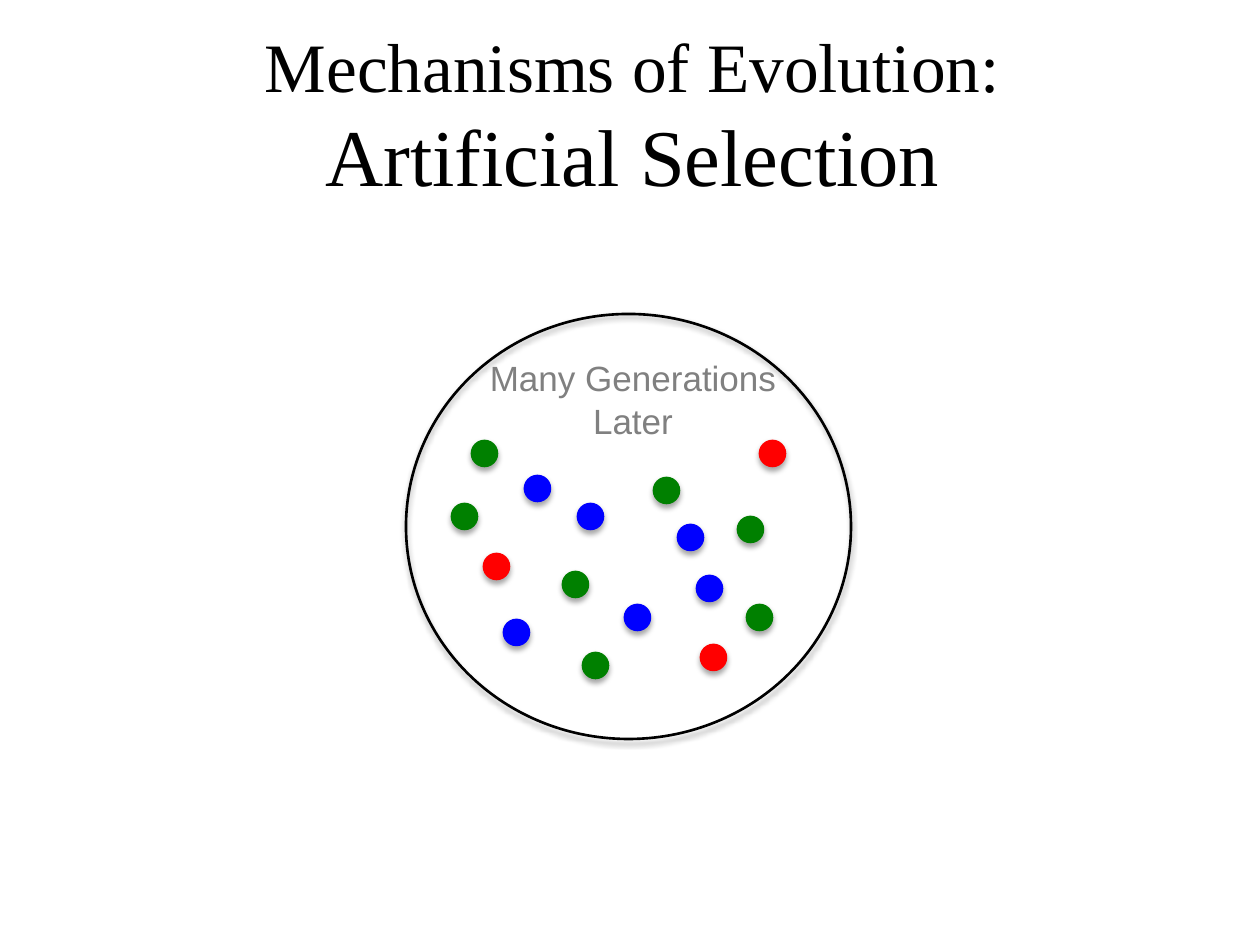
"""Build a slide on artificial selection with a population of coloured dots."""
import lxml.etree
import pptx
import pptx.dml.color
import pptx.enum.shapes
import pptx.enum.text
import pptx.oxml
import pptx.oxml.ns
import pptx.util

PX = 914400 / 126
DOT = 25
THEME = {
    "black": pptx.dml.color.RGBColor(0, 0, 0),
    "grey": pptx.dml.color.RGBColor(128, 128, 128),
    "red": pptx.dml.color.RGBColor(255, 0, 0),
    "green": pptx.dml.color.RGBColor(0, 128, 0),
    "blue": pptx.dml.color.RGBColor(0, 0, 255),
    "title_font": "Times New Roman",
    "label_font": "Arial",
    "topic_size": pptx.util.Pt(39.6),
    "title_size": pptx.util.Pt(46),
    "label_size": pptx.util.Pt(20),
    "line_width": pptx.util.Pt(1.5),
}
SHADOW = (
    f'<a:effectLst {pptx.oxml.ns.nsdecls("a")}>'
    '<a:outerShdw blurRad="38100" dist="25400" dir="5400000" rotWithShape="0">'
    '<a:srgbClr val="000000"><a:alpha val="35000"/></a:srgbClr>'
    "</a:outerShdw></a:effectLst>"
)


def px(*lengths):
    return [pptx.util.Emu(round(length * PX)) for length in lengths]


def add_ellipse(slide, box, line_color, fill_color=None):
    shape = slide.shapes.add_shape(pptx.enum.shapes.MSO_SHAPE.OVAL, *px(*box))
    if fill_color is None:
        shape.fill.background()
    else:
        shape.fill.solid()
        shape.fill.fore_color.rgb = fill_color
    shape.line.color.rgb = line_color
    shape.line.width = THEME["line_width"]
    shape._element.spPr.append(pptx.oxml.parse_xml(SHADOW))


presentation = pptx.Presentation()
presentation.slide_width, presentation.slide_height = px(1260, 945)
slide = presentation.slides.add_slide(presentation.slide_layouts[5])

title = slide.shapes.title
title.left, title.top, title.width, title.height = px(121, 34, 1023, 158)
title.text_frame.auto_size = pptx.enum.text.MSO_AUTO_SIZE.NONE
title.text_frame.vertical_anchor = pptx.enum.text.MSO_ANCHOR.MIDDLE
paragraph = title.text_frame.paragraphs[0]
paragraph.alignment = pptx.enum.text.PP_ALIGN.CENTER
paragraph.font.name = THEME["title_font"]
paragraph.font.color.rgb = THEME["black"]
for text, size in (
    ("Mechanisms of Evolution: ", THEME["topic_size"]),
    ("Artificial Selection", THEME["title_size"]),
):
    run = paragraph.add_run()
    run.text = text
    run.font.size = size

add_ellipse(slide, (406, 314, 445, 425), THEME["black"])

label = slide.shapes.add_textbox(*px(465, 344, 336, 63))
frame = label.text_frame
frame.word_wrap = True
frame.margin_left, frame.margin_top, frame.margin_right, frame.margin_bottom = px(13, 13, 13, 13)
paragraph = frame.paragraphs[0]
paragraph.text = "Many Generations Later"
paragraph.alignment = pptx.enum.text.PP_ALIGN.CENTER
paragraph.font.name = THEME["label_font"]
paragraph.font.size = THEME["label_size"]
paragraph.font.color.rgb = THEME["grey"]

population = {
    "red": [(760, 441), (701, 645), (484, 554)],
    "blue": [(625, 605), (578, 504), (504, 620), (525, 476), (678, 525), (697, 576)],
    "green": [
        (738, 517), (452, 504), (747, 605), (654, 478),
        (472, 441), (583, 653), (563, 572),
    ],
}
for color, positions in population.items():
    for left, top in positions:
        add_ellipse(slide, (left, top, DOT, DOT), THEME[color], THEME[color])

presentation.save("out.pptx")
